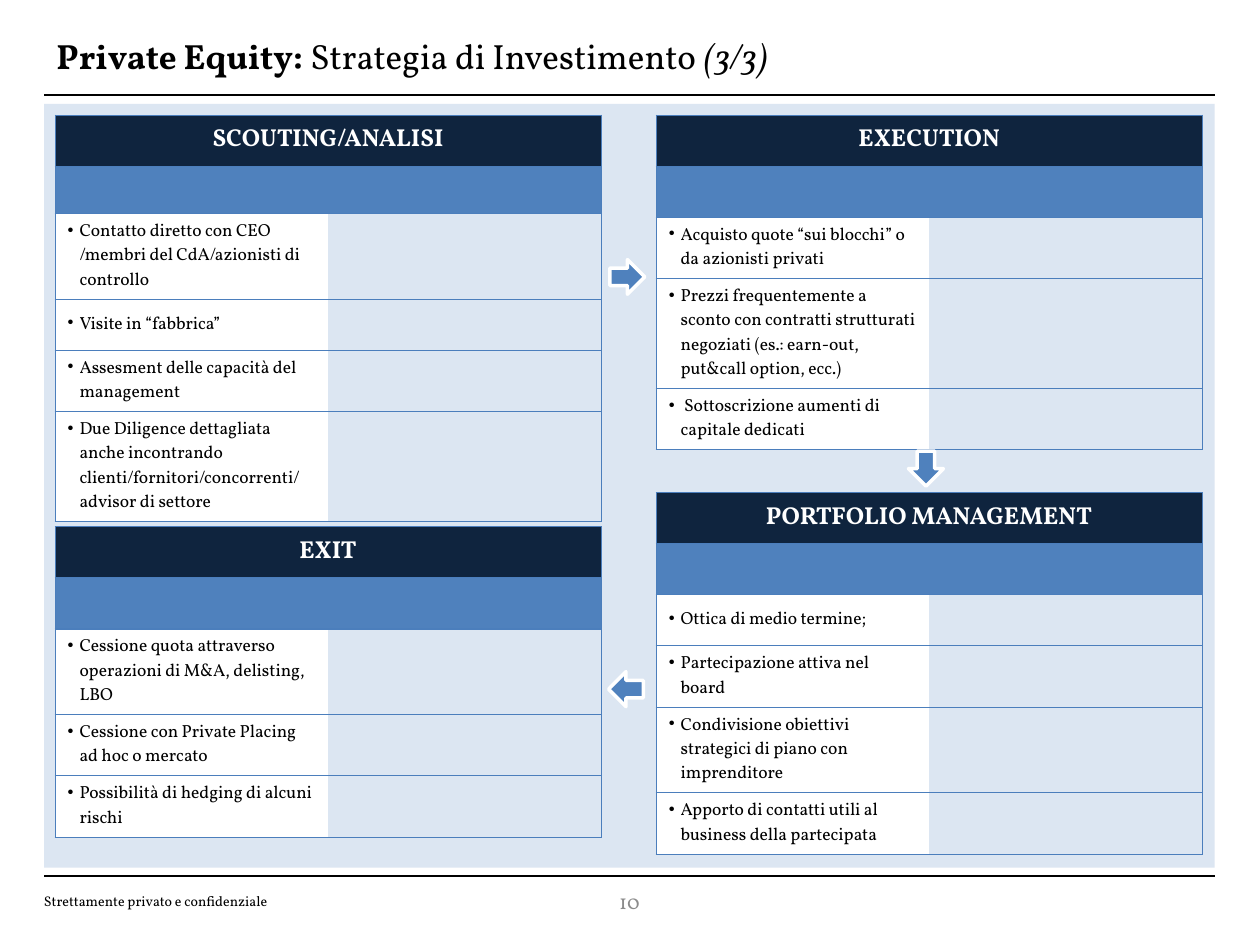
from dataclasses import dataclass
from typing import NamedTuple

from lxml.etree import SubElement
from pptx import Presentation
from pptx.dml.color import RGBColor
from pptx.enum.shapes import MSO_CONNECTOR, MSO_SHAPE
from pptx.enum.text import MSO_ANCHOR, PP_ALIGN
from pptx.oxml.ns import qn
from pptx.util import Pt


@dataclass(frozen=True)
class Theme:
    font: str = "Vollkorn"
    black: str = "000000"
    white: str = "FFFFFF"
    grey: str = "8C8C8C"
    navy: str = "0F243E"
    blue: str = "4F81BD"
    border: str = "4B7EBC"
    panel: str = "DCE6F2"
    title_size: float = 20
    heading_size: float = 14
    page_size: float = 12
    body_size: float = 10
    footer_size: float = 8


class Span(NamedTuple):
    text: str
    bold: bool = False
    italic: bool = False


class Box(NamedTuple):
    left: float
    top: float
    width: float
    height: float

    def lengths(self) -> list:
        return [Pt(value) for value in self]


class Point(NamedTuple):
    text: str
    lines: int

    def height(self) -> float:
        return max(ROW_HEIGHT, 7 + 14 * self.lines)


class Phase(NamedTuple):
    heading: str
    left: float
    top: float
    points: list[Point]
    band_height: float = 29.2


class Arrow(NamedTuple):
    box: Box
    rotation: float


THEME = Theme()
COLUMN_WIDTH = 156
ROW_HEIGHT = 29.2
LEFT, RIGHT = 31.5, 375
RULE_LEFT, RULE_RIGHT = 25.2, 694.1

PHASES = [
    Phase("SCOUTING/ANALISI", LEFT, 65.75, [
        Point("Contatto diretto con CEO /membri del CdA/azionisti di controllo", 3),
        Point("Visite in “fabbrica”", 1),
        Point("Assesment delle capacità del management", 2),
        Point("Due Diligence dettagliata anche incontrando "
              "clienti/fornitori/concorrenti/ advisor di settore", 4),
    ], band_height=27),
    Phase("EXECUTION", RIGHT, 65.75, [
        Point("Acquisto quote “sui blocchi” o da azionisti privati", 2),
        Point("Prezzi frequentemente a sconto con contratti strutturati "
              "negoziati (es.: earn-out, put&call option, ecc.)", 4),
        Point(" Sottoscrizione aumenti di capitale dedicati", 2),
    ]),
    Phase("EXIT", LEFT, 301, [
        Point("Cessione quota attraverso operazioni di M&A, delisting, LBO", 3),
        Point("Cessione con Private Placing ad hoc o mercato", 2),
        Point("Possibilità di hedging di alcuni rischi", 2),
    ]),
    Phase("PORTFOLIO MANAGEMENT", RIGHT, 281.5, [
        Point("Ottica di medio termine;", 1),
        Point("Partecipazione attiva nel board", 2),
        Point("Condivisione obiettivi strategici di piano con imprenditore", 3),
        Point("Apporto di contatti utili al business della partecipata", 2),
    ]),
]

ARROWS = [
    Arrow(Box(348.5, 148.3, 20, 19.8), 0),
    Arrow(Box(519.1, 257.8, 20, 20), 90),
    Arrow(Box(347.8, 383.8, 19.8, 20), 180),
]


def color(value: str) -> RGBColor:
    return RGBColor.from_string(value)


def write(frame, spans: list[Span], *, size: float, ink: str = THEME.black,
          align=PP_ALIGN.LEFT, bullet: bool = False) -> None:
    frame.word_wrap = True
    paragraph = frame.paragraphs[0]
    paragraph.alignment = align
    if bullet:
        paragraph.space_after = Pt(4)
        properties = paragraph._p.get_or_add_pPr()
        properties.set("marL", str(Pt(6.75)))
        properties.set("indent", str(Pt(-6.75)))
        SubElement(properties, qn("a:buChar"), char="•")
    for span in spans:
        run = paragraph.add_run()
        run.text = span.text
        run.font.name = THEME.font
        run.font.size = Pt(size)
        run.font.bold = span.bold
        run.font.italic = span.italic
        run.font.color.rgb = color(ink)


def add_label(slide, box: Box, spans: list[Span], **text_format) -> None:
    frame = slide.shapes.add_textbox(*box.lengths()).text_frame
    frame.vertical_anchor = MSO_ANCHOR.MIDDLE
    write(frame, spans, **text_format)


def add_rule(slide, height: float) -> None:
    rule = slide.shapes.add_connector(
        MSO_CONNECTOR.STRAIGHT, Pt(RULE_LEFT), Pt(height), Pt(RULE_RIGHT), Pt(height))
    rule.line.color.rgb = color(THEME.black)
    rule.line.width = Pt(1)
    SubElement(rule._element.spPr, qn("a:effectLst"))


def style_cell(cell, fill: str | None, edges: str) -> None:
    properties = cell._tc.get_or_add_tcPr()
    for side in "LRTB":
        line = SubElement(properties, qn(f"a:ln{side}"), w=str(Pt(0.75)))
        if side in edges:
            solid = SubElement(line, qn("a:solidFill"))
            SubElement(solid, qn("a:srgbClr"), val=THEME.border)
        else:
            SubElement(line, qn("a:noFill"))
    cell.vertical_anchor = MSO_ANCHOR.MIDDLE
    if fill:
        cell.fill.solid()
        cell.fill.fore_color.rgb = color(fill)
    else:
        cell.fill.background()


def add_phase(slide, phase: Phase) -> None:
    heights = [ROW_HEIGHT, phase.band_height] + [point.height() for point in phase.points]
    box = Box(phase.left, phase.top, 2 * COLUMN_WIDTH, sum(heights))
    table = slide.shapes.add_table(len(heights), 2, *box.lengths()).table
    table.horz_banding = False
    for column in table.columns:
        column.width = Pt(COLUMN_WIDTH)
    table.cell(0, 0).merge(table.cell(0, 1))
    fills = [(THEME.navy, THEME.navy), (THEME.blue, THEME.blue)]
    fills += [(THEME.white, None)] * len(phase.points)
    for index, (height, pair) in enumerate(zip(heights, fills)):
        table.rows[index].height = Pt(height)
        for cell, fill, edges in zip(table.rows[index].cells, pair, ("LTB", "RTB")):
            style_cell(cell, fill, "LRTB" if index == 0 else edges)
    write(table.cell(0, 0).text_frame, [Span(phase.heading, bold=True)],
          size=THEME.heading_size, ink=THEME.white, align=PP_ALIGN.CENTER)
    for row, point in enumerate(phase.points, start=2):
        write(table.cell(row, 0).text_frame, [Span(point.text)],
              size=THEME.body_size, bullet=True)
    for cell in table.iter_cells():
        if not cell.text and not cell.is_spanned:
            SubElement(cell.text_frame.paragraphs[0]._p, qn("a:endParaRPr"),
                       sz=str(int(THEME.body_size * 100)))


def add_block(slide, kind, box: Box, fill: str):
    block = slide.shapes.add_shape(kind, *box.lengths())
    block.shadow.inherit = False
    block.fill.solid()
    block.fill.fore_color.rgb = color(fill)
    block.line.fill.background()
    return block


def add_arrow(slide, arrow: Arrow) -> None:
    block = add_block(slide, MSO_SHAPE.RIGHT_ARROW, arrow.box, THEME.blue)
    block.rotation = arrow.rotation
    block.line.color.rgb = color(THEME.white)
    block.line.width = Pt(2)


def main() -> None:
    deck = Presentation()
    deck.slide_width, deck.slide_height = Pt(720), Pt(540)
    slide = deck.slides.add_slide(deck.slide_layouts[6])
    add_label(slide, Box(18, 506.2, 295.2, 16.6),
              [Span("Strettamente privato e confidenziale")], size=THEME.footer_size)
    add_block(slide, MSO_SHAPE.RECTANGLE, Box(25.2, 59.3, 668.9, 436.5), THEME.panel)
    for height in (54.5, 500.4):
        add_rule(slide, height)
    add_label(slide, Box(25.2, 15.1, 648, 33.8),
              [Span("Private Equity: ", bold=True), Span("Strategia di Investimento "),
               Span("(3/3)", italic=True)], size=THEME.title_size)
    add_label(slide, Box(275.8, 500.4, 167.8, 28.8), [Span("10")],
              size=THEME.page_size, ink=THEME.grey, align=PP_ALIGN.CENTER)
    for phase in PHASES:
        add_phase(slide, phase)
    for arrow in ARROWS:
        add_arrow(slide, arrow)
    deck.save("out.pptx")


if __name__ == "__main__":
    main()
